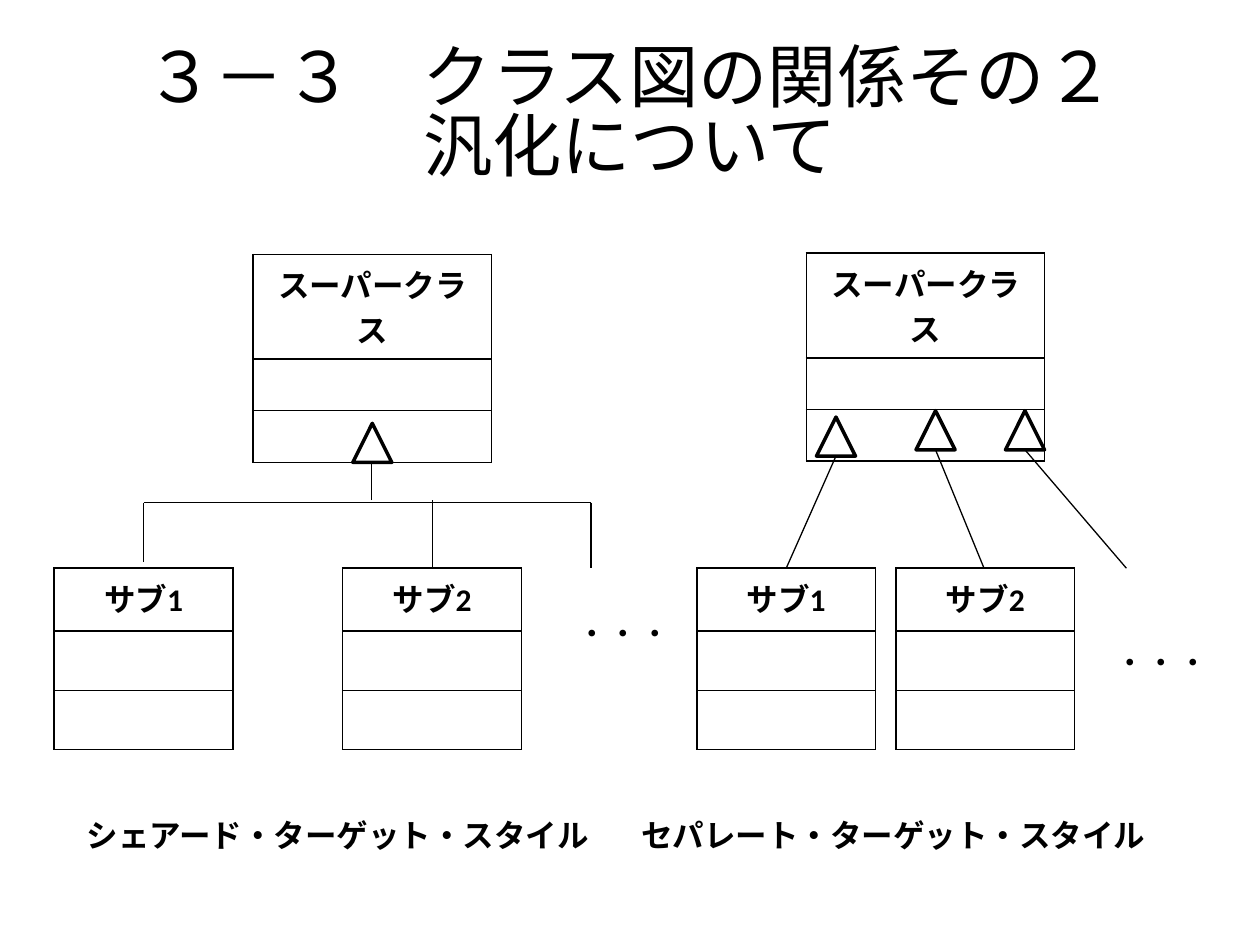
from pptx import Presentation
from pptx.dml.color import RGBColor
from pptx.enum.shapes import MSO_CONNECTOR, MSO_SHAPE
from pptx.enum.text import MSO_ANCHOR, PP_ALIGN
from pptx.oxml import parse_xml
from pptx.oxml.ns import nsdecls, qn
from pptx.util import Inches, Pt

BLACK = RGBColor(0, 0, 0)
WHITE = RGBColor(255, 255, 255)
TRIANGLE_SIZE = 0.31
SUPERCLASS_WIDTH, SUPERCLASS_ROWS = 1.89, (0.83, 0.41, 0.41)
SUBCLASS_WIDTH, SUBCLASS_ROWS = 1.42, (0.5, 0.47, 0.47)
SUBCLASS_TOP = 4.51


def write_text(text_frame, text, font="Arial", size=18, bold=False, line_spacing=None):
    paragraph = text_frame.paragraphs[0]
    paragraph.text = text
    paragraph.alignment = PP_ALIGN.CENTER
    paragraph.line_spacing = line_spacing
    for run in paragraph.runs:
        run.font.name = font
        run.font.size = Pt(size)
        run.font.bold = bold
        run.font.color.rgb = BLACK


def add_label(slide, text, left, top, width, height, **text_format):
    shape = slide.shapes.add_textbox(
        Inches(left), Inches(top), Inches(width), Inches(height))
    shape.text_frame.word_wrap = True
    shape.text_frame.vertical_anchor = MSO_ANCHOR.MIDDLE
    write_text(shape.text_frame, text, **text_format)


def add_borders(cell):
    properties = cell._tc.get_or_add_tcPr()
    for index, side in enumerate(("lnL", "lnR", "lnT", "lnB")):
        properties.insert(index, parse_xml(
            f'<a:{side} {nsdecls("a")} w="{Pt(1)}"><a:solidFill>'
            f'<a:srgbClr val="{BLACK}"/></a:solidFill></a:{side}>'))


def add_class_box(slide, name, left, top, width, row_heights):
    """Draw a UML class: name, attributes and operations."""
    table = slide.shapes.add_table(
        len(row_heights), 1, Inches(left), Inches(top),
        Inches(width), Inches(sum(row_heights))).table
    table.first_row = False
    table.horz_banding = False
    for row, height in zip(table.rows, row_heights):
        row.height = Inches(height)
        cell = row.cells[0]
        cell.fill.background()
        add_borders(cell)
    write_text(table.cell(0, 0).text_frame, name, font="Calibri", bold=True)


def add_superclass(slide, left, top):
    add_class_box(slide, "スーパークラス", left, top, SUPERCLASS_WIDTH, SUPERCLASS_ROWS)


def add_subclasses(slide, lefts):
    for number, left in enumerate(lefts, 1):
        add_class_box(slide, f"サブ{number}", left, SUBCLASS_TOP,
                      SUBCLASS_WIDTH, SUBCLASS_ROWS)


def add_triangle(slide, left, top):
    shape = slide.shapes.add_shape(
        MSO_SHAPE.ISOSCELES_TRIANGLE, Inches(left), Inches(top),
        Inches(TRIANGLE_SIZE), Inches(TRIANGLE_SIZE))
    shape.shadow.inherit = False
    shape.fill.solid()
    shape.fill.fore_color.rgb = WHITE
    shape.line.color.rgb = BLACK
    shape.line.width = Pt(2)


def add_line(slide, start_x, start_y, end_x, end_y):
    connector = slide.shapes.add_connector(
        MSO_CONNECTOR.STRAIGHT, Inches(start_x), Inches(start_y),
        Inches(end_x), Inches(end_y))
    connector.line.color.rgb = BLACK
    connector.line.width = Pt(0.75)
    connector._element.spPr.append(
        connector._element.makeelement(qn("a:effectLst"), {}))


def add_shared_target(slide):
    """Subclasses join one bar that leads to a single triangle."""
    add_superclass(slide, 2.01, 2.02)
    add_subclasses(slide, (0.43, 2.72))
    add_triangle(slide, 2.8, 3.36)
    bar_left, bar_right, bar_y = 1.14, 4.69, 3.99
    add_line(slide, bar_left, 4.46, bar_left, bar_y)
    add_line(slide, 3.43, SUBCLASS_TOP, 3.43, 3.97)
    add_line(slide, bar_left, bar_y, bar_right, bar_y)
    add_line(slide, 2.95, 3.97, 2.95, 3.67)
    add_line(slide, bar_right, bar_y, bar_right, SUBCLASS_TOP)
    add_label(slide, "・・・", 4.37, 4.69, 1.16, 0.67)
    add_label(slide, "シェアード・ターゲット・スタイル", 0.28, 6.19, 4.8, 0.87, bold=True)


def add_separate_targets(slide):
    """Each subclass has its own line and triangle."""
    add_superclass(slide, 6.4, 2.01)
    add_subclasses(slide, (5.53, 7.11))
    for left, top, start_x in ((6.48, 3.31, 6.24), (7.27, 3.26, 7.81), (7.98, 3.26, 8.94)):
        add_triangle(slide, left, top)
        add_line(slide, start_x, SUBCLASS_TOP,
                 left + TRIANGLE_SIZE / 2, top + TRIANGLE_SIZE)
    add_label(slide, "・・・", 8.64, 4.92, 1.16, 0.67)
    add_label(slide, "セパレート・ターゲット・スタイル", 4.69, 6.19, 4.8, 0.87, bold=True)


def main():
    presentation = Presentation()
    presentation.slide_width = Inches(10)
    presentation.slide_height = Inches(7.5)
    slide = presentation.slides.add_slide(presentation.slide_layouts[6])
    add_label(slide, "３－３　クラス図の関係その２\v汎化について", 0.5, 0.3, 9, 1.25,
              font="Calibri", size=39.6, line_spacing=0.82)
    add_shared_target(slide)
    add_separate_targets(slide)
    presentation.save("out.pptx")


if __name__ == "__main__":
    main()
